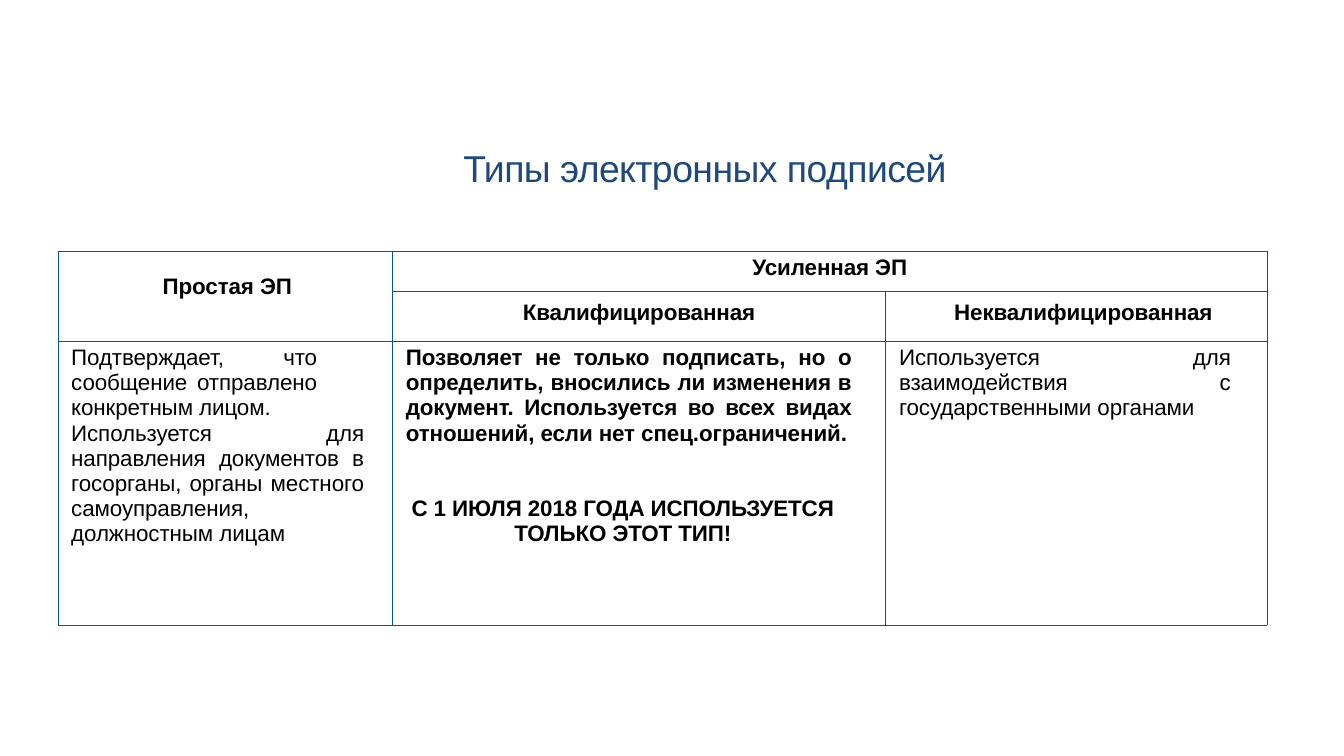
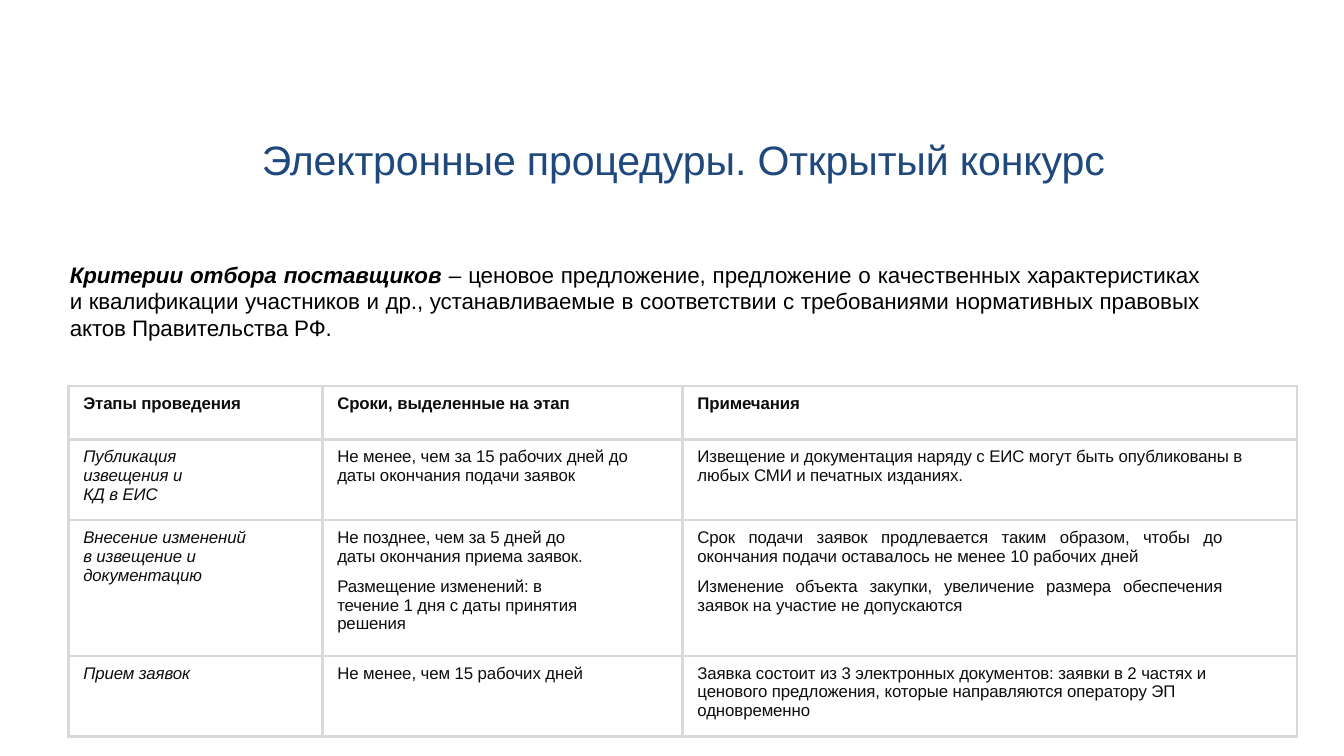
import dataclasses

import lxml.etree
import pptx
import pptx.dml.color
import pptx.enum.text
import pptx.oxml.ns
import pptx.util

PX = 9144
FONT = "Arial"
NAVY = pptx.dml.color.RGBColor(0x1F, 0x49, 0x7D)
BLACK = pptx.dml.color.RGBColor(0, 0, 0)
INK = pptx.dml.color.RGBColor(0x0D, 0x0D, 0x0D)
BLUE = pptx.dml.color.RGBColor(0x07, 0x56, 0x93)
GREY = pptx.dml.color.RGBColor(0xD9, 0xD9, 0xD9)
ALIGN = pptx.enum.text.PP_ALIGN


@dataclasses.dataclass
class Style:
    """Type settings shared by the runs of a text."""
    size: int
    color: pptx.dml.color.RGBColor
    tracking: int = -5


@dataclasses.dataclass
class Para:
    """One paragraph: runs of (text, bold, italic), indents in px, space in points."""
    runs: list
    left: int = 0
    right: int = 0
    align: ALIGN = ALIGN.LEFT
    before: float = 0


@dataclasses.dataclass
class Cell:
    """Paragraphs of a table cell with its top margin in px."""
    paras: list
    top: int = 6


@dataclasses.dataclass
class Grid:
    """Measures in px and look of a table."""
    box: tuple
    cols: list
    rows: list
    style: Style
    line: pptx.dml.color.RGBColor
    weight: float


def px(n):
    """Turn px into EMU."""
    return pptx.util.Emu(n * PX)


def para(text, bold=False, italic=False, **kw):
    """Make a paragraph of a single run."""
    return Para([(text, bold, italic)], **kw)


def write(tf, paras, style):
    """Fill a text frame with paragraphs."""
    tf.word_wrap = True
    for i, item in enumerate(paras):
        p = tf.paragraphs[0] if i == 0 else tf.add_paragraph()
        pPr = p._p.get_or_add_pPr()
        pPr.set("marL", str(px(item.left)))
        pPr.set("marR", str(px(item.right)))
        pPr.set("indent", "0")
        p.alignment = item.align
        p.line_spacing = 1.0
        p.space_before = pptx.util.Pt(item.before)
        for text, bold, italic in item.runs:
            r = p.add_run()
            r.text = text
            r.font.name = FONT
            r.font.size = pptx.util.Pt(style.size)
            r.font.bold = bold
            r.font.italic = italic
            r.font.color.rgb = style.color
            r._r.get_or_add_rPr().set("spc", str(style.tracking))


def place_text(sp, box, paras, style, anchor):
    """Move a text shape to its box and fill it."""
    sp.left, sp.top, sp.width, sp.height = map(px, box)
    tf = sp.text_frame
    tf.margin_left = tf.margin_right = tf.margin_bottom = 0
    tf.margin_top = px(1)
    tf.vertical_anchor = anchor
    tf.auto_size = pptx.enum.text.MSO_AUTO_SIZE.SHAPE_TO_FIT_TEXT
    write(tf, paras, style)


def add_titled_slide(prs, title, box, style):
    """Add a slide with a centred title."""
    slide = prs.slides.add_slide(prs.slide_layouts[5])
    place_text(slide.shapes.title, box, [para(title, left=1, align=ALIGN.CENTER)],
               style, pptx.enum.text.MSO_ANCHOR.MIDDLE)
    return slide


def set_borders(cell, color, weight):
    """Draw all four sides of a cell."""
    tcPr = cell._tc.get_or_add_tcPr()
    qn = pptx.oxml.ns.qn
    for i, side in enumerate(("a:lnL", "a:lnR", "a:lnT", "a:lnB")):
        ln = lxml.etree.Element(qn(side), w=str(pptx.util.Pt(weight)))
        fill = lxml.etree.SubElement(ln, qn("a:solidFill"))
        lxml.etree.SubElement(fill, qn("a:srgbClr"), val=str(color))
        tcPr.insert(i, ln)


def add_grid(slide, grid, cells, merges=()):
    """Add a bordered table; cells maps (row, column) to a Cell."""
    shape = slide.shapes.add_table(len(grid.rows), len(grid.cols), *map(px, grid.box))
    table = shape.table
    table.first_row = table.horz_banding = False
    for col, width in zip(table.columns, grid.cols):
        col.width = px(width)
    for row, height in zip(table.rows, grid.rows):
        row.height = px(height)
    for start, end in merges:
        table.cell(*start).merge(table.cell(*end))
    for cell in table.iter_cells():
        cell.margin_left = cell.margin_right = cell.margin_top = cell.margin_bottom = 0
        cell.fill.background()
        set_borders(cell, grid.line, grid.weight)
    for place, content in cells.items():
        cell = table.cell(*place)
        cell.margin_top = px(content.top)
        write(cell.text_frame, content.paras, grid.style)


def build_signatures(prs):
    """Build the slide on types of electronic signatures."""
    slide = add_titled_slide(prs, "Типы электронных подписей", (91, 107, 866, 35),
                             Style(20, NAVY, -30))
    grid = Grid((43, 187, 900, 276), [249, 367, 284], [30, 35, 211],
                Style(12, BLACK), BLUE, 0.25)
    body = {"left": 10, "align": ALIGN.JUSTIFY}
    cells = {
        (0, 0): Cell([para("Простая ЭП", True, left=78)], 17),
        (0, 1): Cell([para("Усиленная ЭП", True, align=ALIGN.CENTER)], 3),
        (1, 1): Cell([para("Квалифицированная", True, left=97)]),
        (1, 2): Cell([para("Неквалифицированная", True, left=51)]),
        (2, 0): Cell([
            para("Подтверждает, что сообщение отправлено конкретным лицом.", right=56, **body),
            para("Используется для направления документов в госорганы, органы местного "
                 "самоуправления, должностным лицам", right=21, **body)], 3),
        (2, 1): Cell([
            para("Позволяет не только подписать, но о определить, вносились ли изменения в "
                 "документ. Используется во всех видах отношений, если нет спец.ограничений.",
                 True, right=25, **body),
            para("С 1 ИЮЛЯ 2018 ГОДА ИСПОЛЬЗУЕТСЯ", True, right=24,
                 align=ALIGN.CENTER, before=27),
            para("ТОЛЬКО ЭТОТ ТИП!", True, right=24, align=ALIGN.CENTER)], 3),
        (2, 2): Cell([para("Используется для взаимодействия с государственными органами",
                           right=27, **body)], 3),
    }
    add_grid(slide, grid, cells, [((0, 0), (1, 0)), ((0, 1), (0, 2))])


def build_tender(prs):
    """Build the slide on the open tender with its stages."""
    slide = add_titled_slide(prs, "Электронные процедуры. Открытый конкурс",
                             (40, 99, 936, 38), Style(22, NAVY))
    box = (51, 193, 847, 62)
    criteria = Para([
        ("Критерии отбора поставщиков ", True, True),
        ("– ценовое предложение, предложение о качественных характеристиках и квалификации "
         "участников и др., устанавливаемые в соответствии с требованиями нормативных "
         "правовых актов Правительства РФ.", False, False)],
        left=1, right=5, align=ALIGN.JUSTIFY)
    place_text(slide.shapes.add_textbox(*map(px, box)), box, [criteria],
               Style(12, BLACK), pptx.enum.text.MSO_ANCHOR.TOP)

    grid = Grid((51, 287, 914, 261), [189, 268, 457], [40, 60, 101, 60],
                Style(9, INK), GREY, 1.5)
    heads = ["Этапы проведения", "Сроки, выделенные на этап", "Примечания"]
    cells = {(0, c): Cell([para(head, True, left=11)]) for c, head in enumerate(heads)}
    note = {"left": 11, "right": 56, "align": ALIGN.JUSTIFY}
    stages = [
        [[para("Публикация извещения и КД в ЕИС", italic=True, left=11, right=92)],
         [para("Не менее, чем за 15 рабочих дней до даты окончания подачи заявок",
               left=11, right=20)],
         [para("Извещение и документация наряду с ЕИС могут быть опубликованы в любых СМИ "
               "и печатных изданиях.", left=11, right=20)]],
        [[para(text, italic=True, left=11)
          for text in ("Внесение изменений", "в извещение и", "документацию")],
         [para("Не позднее, чем за 5 дней до", left=11),
          para("даты окончания приема заявок.", left=11),
          para("Размещение изменений: в течение 1 дня с даты принятия решения",
               left=11, right=65, before=6)],
         [para("Срок подачи заявок продлевается таким образом, чтобы до окончания подачи "
               "оставалось не менее 10 рабочих дней", **note),
          para("Изменение объекта закупки, увеличение размера обеспечения заявок на участие "
               "не допускаются", before=6, **note)]],
        [[para("Прием заявок", italic=True, left=11)],
         [para("Не менее, чем 15 рабочих дней", left=11)],
         [para("Заявка состоит из 3 электронных документов: заявки в 2 частях и ценового "
               "предложения, которые направляются оператору ЭП одновременно",
               left=11, right=40)]],
    ]
    for r, stage in enumerate(stages, 1):
        for c, paras in enumerate(stage):
            cells[r, c] = Cell(paras)
    add_grid(slide, grid, cells)


def main():
    """Build and save the presentation."""
    prs = pptx.Presentation()
    prs.slide_width = px(1000)
    prs.slide_height = prs.slide_width * 9 // 16
    build_signatures(prs)
    build_tender(prs)
    prs.save("out.pptx")


if __name__ == "__main__":
    main()
